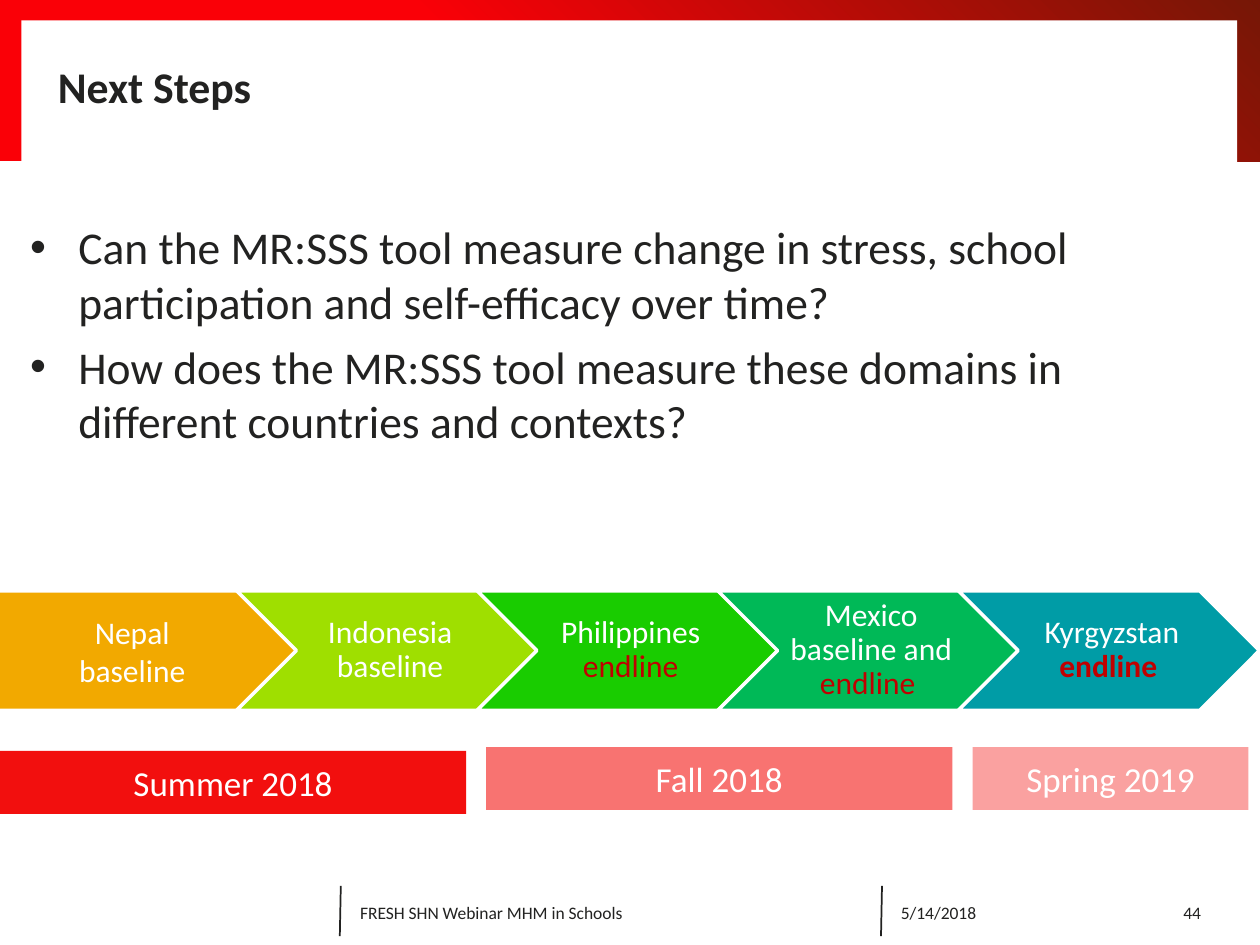
from lxml.etree import SubElement
from pptx import Presentation
from pptx.dml.color import RGBColor
from pptx.enum.shapes import MSO_CONNECTOR, MSO_SHAPE
from pptx.enum.text import MSO_ANCHOR, PP_ALIGN
from pptx.oxml.ns import qn
from pptx.util import Cm, Pt

INK = RGBColor(0x22, 0x22, 0x21)
WHITE = RGBColor(0xFF, 0xFF, 0xFF)
CRIMSON = RGBColor(0xC0, 0x00, 0x00)
BAND_RED = RGBColor(0xFA, 0x00, 0x07)
BAND_DARK = RGBColor(0x76, 0x17, 0x06)
AMBER = RGBColor(0xF2, 0xA9, 0x00)
LIME = RGBColor(0x9F, 0xDF, 0x00)
GREEN = RGBColor(0x19, 0xCC, 0x00)
EMERALD = RGBColor(0x00, 0xB9, 0x57)
TEAL = RGBColor(0x00, 0x9C, 0xA6)
RED = RGBColor(0xF2, 0x0F, 0x0E)
CORAL = RGBColor(0xF8, 0x73, 0x71)
PINK = RGBColor(0xFA, 0xA1, 0xA0)

DEFAULT_INSETS = (0.25, 0.13, 0.25, 0.13)
NO_INSETS = (0, 0, 0, 0)


class Deck:
    """Holds the text style and the current slide."""

    font_name = "Calibri"

    def __init__(self, width, height):
        self.prs = Presentation()
        self.prs.slide_width, self.prs.slide_height = Cm(width), Cm(height)
        self.slide = self.prs.slides.add_slide(self.prs.slide_layouts[6])

    def fill_text(self, holder, paragraphs, size, color, align=PP_ALIGN.LEFT,
                  anchor=MSO_ANCHOR.MIDDLE, insets=DEFAULT_INSETS, bold=False,
                  bullet=False, **spacing):
        """Each paragraph is a list of (text, overriding font format) runs."""
        frame = holder.text_frame
        frame.word_wrap = True
        frame.vertical_anchor = anchor
        for side, inset in zip(("left", "top", "right", "bottom"), insets):
            setattr(frame, f"margin_{side}", Cm(inset))
        for number, runs in enumerate(paragraphs):
            paragraph = frame.paragraphs[0] if number == 0 else frame.add_paragraph()
            if bullet:
                self.add_bullet(paragraph)
            for name, value in {"alignment": align, **spacing}.items():
                setattr(paragraph, name, value)
            for text, changes in runs:
                run = paragraph.add_run()
                run.text = text
                look = {"name": self.font_name, "size": Pt(size), "bold": bold,
                        "color": color, **changes}
                run.font.color.rgb = look.pop("color")
                for name, value in look.items():
                    setattr(run.font, name, value)

    def add_bullet(self, paragraph):
        properties = paragraph._p.get_or_add_pPr()
        properties.set("marL", str(Cm(0.97)))
        properties.set("indent", str(Cm(-0.97)))
        SubElement(properties, qn("a:buFont"), typeface="Arial")
        SubElement(properties, qn("a:buChar"), char="•")

    def text(self, box, paragraphs, size, **style):
        holder = self.slide.shapes.add_textbox(*map(Cm, box))
        self.fill_text(holder, paragraphs, size, INK, **style)

    def shape(self, kind, box, fill, outline=None):
        shape = self.slide.shapes.add_shape(kind, *map(Cm, box))
        shape.shadow.inherit = False
        if isinstance(fill, dict):
            shape.fill.gradient()
            shape.fill.gradient_angle = 45
            for stop, (position, color) in zip(shape.fill.gradient_stops, fill.items()):
                stop.position, stop.color.rgb = position, color
        else:
            shape.fill.solid()
            shape.fill.fore_color.rgb = fill
        if outline is None:
            shape.line.fill.background()
        else:
            shape.line.color.rgb = outline
            shape.line.width = Pt(2)
        return shape

    def line(self, start, end):
        line = self.slide.shapes.add_connector(
            MSO_CONNECTOR.STRAIGHT, *map(Cm, start + end))
        line.line.color.rgb = INK
        line.line.width = Pt(1)
        SubElement(line._element.spPr, qn("a:effectLst"))


def main():
    deck = Deck(25.4, 19.05)

    # Header band with its white inner panel
    deck.shape(MSO_SHAPE.RECTANGLE, (0, 0, 25.4, 3.25), {0.4: BAND_RED, 1: BAND_DARK})
    deck.shape(MSO_SHAPE.RECTANGLE, (0.43, 0.41, 24.51, 3), WHITE)
    deck.text((1.17, 0.56, 23.01, 2.34), [[("Next Steps", {})]], 25,
              bold=True, insets=NO_INSETS)

    # Footer
    for divider in (6.87, 17.78):
        deck.line((divider, 17.86), (divider - 0.02, 18.87))
    for left, width, label, align in (
        (17.91, 4.39, "5/14/2018", PP_ALIGN.LEFT),
        (7.01, 10.62, "FRESH SHN Webinar MHM in Schools", PP_ALIGN.LEFT),
        (22.3, 2.16, "44", PP_ALIGN.RIGHT),
    ):
        deck.text((left, 17.88, width, 1.02), [[(label, {})]], 10, align=align)

    # Questions
    questions = (
        "Can the MR:SSS tool measure change in stress, school participation "
        "and self-efficacy over time?",
        "How does the MR:SSS tool measure these domains in different countries "
        "and contexts?",
    )
    deck.text((0.61, 4.42, 24.16, 13.08), [[(question, {})] for question in questions],
              26, anchor=MSO_ANCHOR.TOP, insets=NO_INSETS, bullet=True,
              space_after=Pt(6))

    # Country timeline
    endline = {"color": CRIMSON}
    countries = (
        (AMBER, [[("Nepal ", {})], [("baseline ", {})]]),
        (LIME, [[("Indonesia baseline", {})]]),
        (GREEN, [[("Philippines ", {}), ("endline", endline)]]),
        (EMERALD, [[("Mexico baseline and ", {}), ("endline ", endline)]]),
        (TEAL, [[("Kyrgyzstan ", {}), ("endline ", {**endline, "bold": True})]]),
    )
    for step, (fill, label) in enumerate(countries):
        first = step == 0
        arrow = deck.shape(MSO_SHAPE.PENTAGON if first else MSO_SHAPE.CHEVRON,
                           (-0.08 + 4.85 * step, 11.91, 6.07, 2.41), fill, WHITE)
        deck.fill_text(arrow, label, 18, WHITE, align=PP_ALIGN.CENTER,
                       insets=(0.25 if first else 0.2, 0.13, 0.08, 0.13),
                       line_spacing=1.0 if first else 0.9)

    # Seasons
    for left, top, width, fill, season in (
        (0, 15.14, 9.4, RED, "Summer 2018"),
        (9.8, 15.06, 9.4, CORAL, "Fall 2018"),
        (19.61, 15.06, 5.56, PINK, "Spring 2019"),
    ):
        bar = deck.shape(MSO_SHAPE.RECTANGLE, (left, top, width, 1.27), fill)
        deck.fill_text(bar, [[(season, {})]], 20, WHITE, align=PP_ALIGN.CENTER)

    deck.prs.save("out.pptx")


if __name__ == "__main__":
    main()
